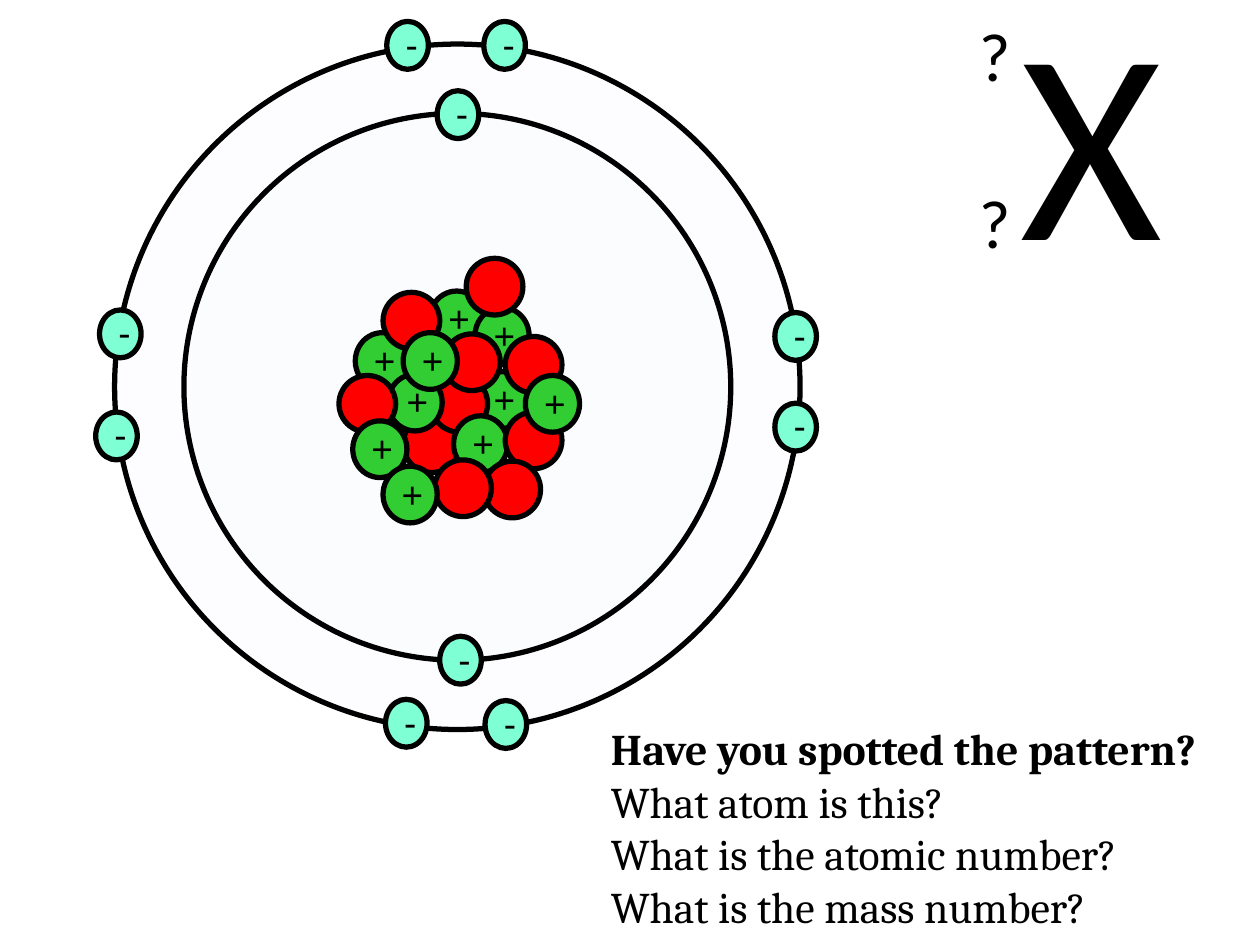
from pptx import Presentation
from pptx.dml.color import RGBColor
from pptx.enum.shapes import MSO_SHAPE as SHAPE
from pptx.enum.text import MSO_ANCHOR as ANCHOR
from pptx.util import Inches, Pt

COLS, ROWS = 1000, 750
CELL = Inches(10) // COLS
BLACK = "000000"
KINDS = {
    "electron": dict(size=(33, 38), fill="7FFFD4", sign="-", label=(5, -5, 61, 46)),
    "proton": dict(size=(43, 45), fill="32CD32", sign="+", label=(5, -1, 74, 46)),
    "neutron": dict(size=(45, 45), fill="FF0000", sign="", label=None),
}
SHELLS = [(0, "FDFDFF"), (55, "FBFCFE")]
ELECTRONS = [(256, 37), (258, 470), (293, -18), (216, -18), (215, 520),
             (294, 521), (524, 213), (524, 285), (-12, 211), (-15, 292)]
NUCLEUS = [
    ("proton", [(191, 229), (250, 196), (286, 260)]),
    ("neutron", [(213, 197), (229, 295), (251, 263)]),
    ("proton", [(217, 262), (286, 209), (269, 295)]),
    ("neutron", [(178, 263), (279, 170), (310, 232), (310, 292), (261, 230)]),
    ("proton", [(229, 229)]),
    ("neutron", [(293, 331)]),
    ("proton", [(326, 263), (189, 299)]),
    ("neutron", [(254, 330)]),
    ("proton", [(213, 335)]),
]
QUESTIONS = ["Have you spotted the pattern?", "What atom is this?",
             "What is the atomic number?", "What is the mass number?"]


def color(value):
    """Turn a hex string into a colour."""
    return RGBColor.from_string(value)


def cells(*values):
    """Turn grid cells into lengths."""
    return [value * CELL for value in values]


def add_circle(shapes, x, y, w, h, fill):
    """Draw a filled, black-outlined ellipse."""
    sp = shapes.add_shape(SHAPE.OVAL, *cells(x, y, w, h))
    sp.shadow.inherit = False
    sp.fill.solid()
    sp.fill.fore_color.rgb = color(fill)
    sp.line.color.rgb = color(BLACK)
    sp.line.width = Pt(3)


def add_text(shapes, box, lines, wrap=False, **font):
    """Write one paragraph per line, each with the given font values."""
    tf = shapes.add_textbox(*cells(*box)).text_frame
    tf.word_wrap = wrap
    tf.vertical_anchor = ANCHOR.TOP
    for i, line in enumerate(lines):
        p = tf.paragraphs[0] if i == 0 else tf.add_paragraph()
        r = p.add_run()
        r.text = line
        r.font.color.rgb = color(BLACK)
        for name, value in font.items():
            setattr(r.font, name, value)
    return tf


def add_particle(s, x, y, kind):
    """Place a particle, grouped with its charge sign if it has one."""
    look = KINDS[kind]
    shapes = s.shapes.add_group_shape().shapes if look["sign"] else s.shapes
    add_circle(shapes, x, y, *look["size"], look["fill"])
    if look["sign"]:
        dx, dy, w, h = look["label"]
        add_text(shapes, (x + dx, y + dy, w, h), [look["sign"]],
                 wrap=True, name="Arial", size=Pt(21.1))


def add_atom(s, x, y, size):
    """Draw the shells, electrons and nucleus in a square box."""
    for inset, fill in SHELLS:
        side = size - 2 * inset
        add_circle(s.shapes, x + inset, y + inset, side, side, fill)
    for kind, places in [("electron", ELECTRONS)] + NUCLEUS:
        for dx, dy in places:
            add_particle(s, x + dx, y + dy, kind)


def add_symbol(s, x, y):
    """Write the element symbol with its two unknown numbers."""
    add_text(s.shapes, (x + 33, y - 37, 124, 273), ["X"],
             name="Calibri", size=Pt(156.1))
    for top in (y + 132, y):
        add_text(s.shapes, (x, top, 26, 76), ["?"], name="Calibri", size=Pt(39))


def add_questions(s, x, y, w, h):
    """List the questions under a bold first line."""
    tf = add_text(s.shapes, (x, y, w, h), QUESTIONS, wrap=True,
                  name="Cambria", size=Pt(25))
    tf.paragraphs[0].runs[0].font.bold = True


def main():
    """Build and save the slide."""
    prs = Presentation()
    prs.slide_width, prs.slide_height = cells(COLS, ROWS)
    s = prs.slides.add_slide(prs.slide_layouts[6])
    add_atom(s, 91, 35, 544)
    add_symbol(s, 767, 6)
    add_questions(s, 475, 568, 544, 178)
    prs.save("out.pptx")


if __name__ == "__main__":
    main()
